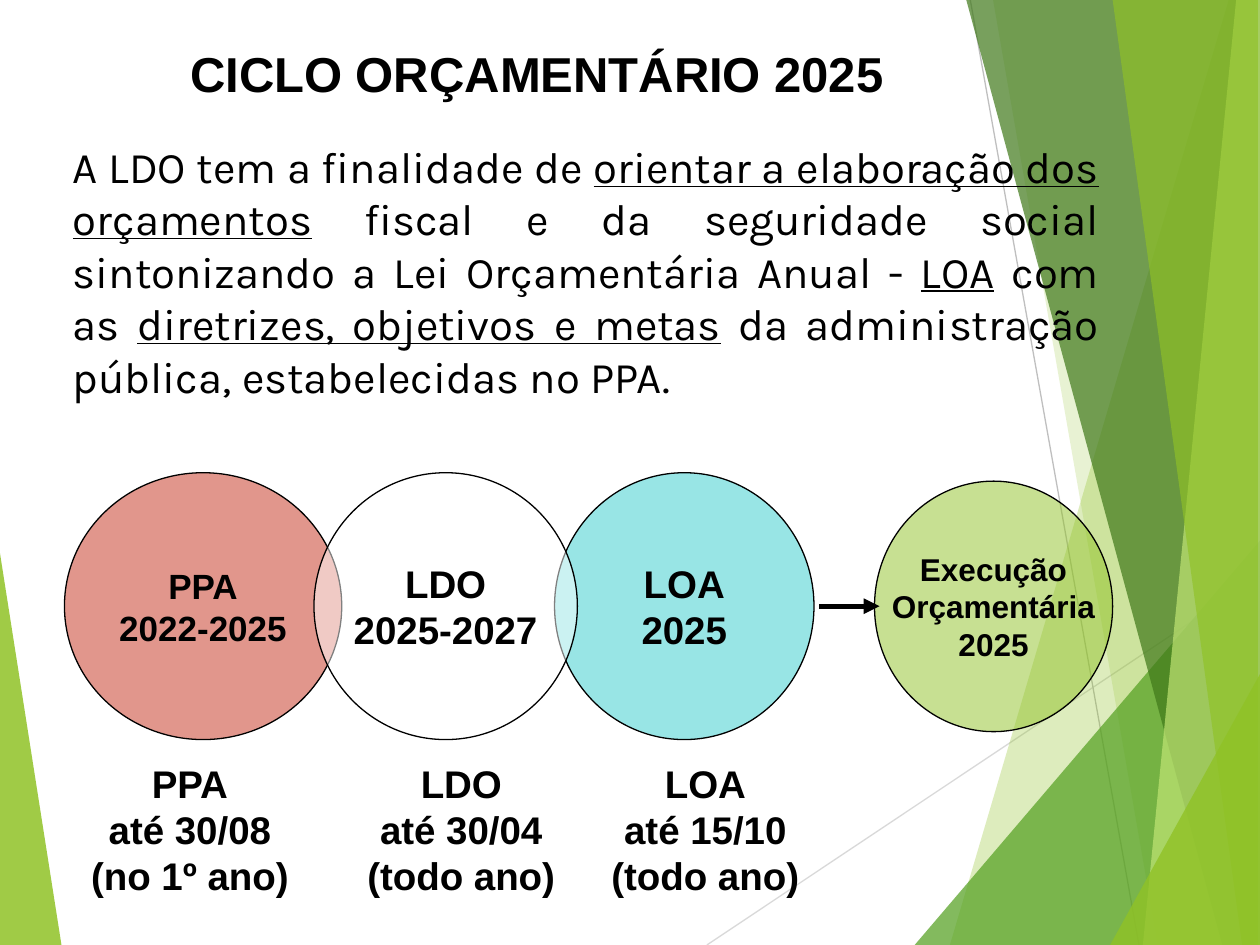
from dataclasses import dataclass

from lxml import etree
from pptx import Presentation
from pptx import util as u
from pptx.dml.color import RGBColor
from pptx.enum import shapes, text
from pptx.oxml.ns import qn

WIDE, HIGH = 25.4, 19.05


@dataclass(frozen=True)
class Theme:
    ink: str = "000000"
    lime: str = "90C226"
    leaf: str = "54A021"
    moss: str = "3F7819"
    pale: str = "C0E474"
    red: str = "C42F1A"
    aqua: str = "33CCCC"
    white: str = "FFFFFF"
    mist: str = "D9D9D9"
    grey: str = "BFBFBF"
    head: str = "Arial"
    body: str = "Karla"
    title: int = 28
    para: int = 25
    large: int = 22
    mid: int = 20
    small: int = 18


class Deck:
    def __init__(self, theme):
        self.theme = theme
        self.file = Presentation()
        self.file.slide_width, self.file.slide_height = u.Cm(WIDE), u.Cm(HIGH)
        self.slide = self.file.slides.add_slide(self.file.slide_layouts[5])

    def paint(self, shape, color, alpha):
        shape.shadow.inherit = False
        shape.fill.solid()
        shape.fill.fore_color.rgb = RGBColor.from_string(color)
        tint = shape.fill._xPr.find(qn("a:solidFill"))[0]
        etree.SubElement(tint, qn("a:alpha"), val=str(alpha * 1000))

    def facet(self, points, color, alpha):
        dots = [(u.Cm(x), u.Cm(y)) for x, y in points]
        pen = self.slide.shapes.build_freeform(*dots[0])
        pen.add_line_segments(dots[1:], close=True)
        shape = pen.convert_to_shape()
        self.paint(shape, color, alpha)
        shape.line.fill.background()

    def line(self, start, end, color, width, arrow=False):
        link = self.slide.shapes.add_connector(
            shapes.MSO_CONNECTOR.STRAIGHT, *[u.Cm(v) for v in start + end])
        link.line.color.rgb = RGBColor.from_string(color)
        link.line.width = u.Pt(width)
        if arrow:
            etree.SubElement(link.line._get_or_add_ln(), qn("a:tailEnd"), type="triangle")
        etree.SubElement(link._element.spPr, qn("a:effectLst"))

    def run(self, para, words, size, face, bold=True, under=False):
        run = para.add_run()
        run.text = words
        font = run.font
        font.size, font.name, font.bold, font.underline = u.Pt(size), face, bold, under
        font.color.rgb = RGBColor.from_string(self.theme.ink)

    def rows(self, frame, lines, size, align):
        for i, words in enumerate(lines):
            para = frame.add_paragraph() if i else frame.paragraphs[0]
            para.alignment = align
            self.run(para, words, size, self.theme.head)

    def title(self, box, words):
        shape = self.slide.shapes.title
        shape.left, shape.top, shape.width, shape.height = [u.Cm(v) for v in box]
        frame = shape.text_frame
        frame.auto_size, frame.word_wrap = text.MSO_AUTO_SIZE.NONE, False
        frame.vertical_anchor = text.MSO_ANCHOR.TOP
        self.rows(frame, [words], self.theme.title, text.PP_ALIGN.LEFT)

    def box(self, box):
        frame = self.slide.shapes.add_textbox(*[u.Cm(v) for v in box]).text_frame
        frame.word_wrap = True
        return frame

    def prose(self, box, parts, indent):
        para = self.box(box).paragraphs[0]
        para.alignment = text.PP_ALIGN.JUSTIFY
        para._p.get_or_add_pPr().set("marL", str(u.Cm(indent)))
        for words, under in parts:
            self.run(para, words, self.theme.para, self.theme.body, False, under)

    def columns(self, box, lines, stops):
        frame = self.box(box)
        self.rows(frame, ["\t" + "\t".join(line) for line in lines],
                  self.theme.large, text.PP_ALIGN.LEFT)
        for para in frame.paragraphs:
            tabs = etree.SubElement(para._p.get_or_add_pPr(), qn("a:tabLst"))
            for stop in stops:
                etree.SubElement(tabs, qn("a:tab"), pos=str(u.Cm(stop)), algn="ctr")

    def circle(self, box, color, lines, size):
        shape = self.slide.shapes.add_shape(
            shapes.MSO_SHAPE.OVAL, *[u.Cm(v) for v in box])
        self.paint(shape, color, 50)
        shape.line.color.rgb = RGBColor.from_string(self.theme.ink)
        shape.line.width = u.Pt(0.75)
        frame = shape.text_frame
        frame.word_wrap = False
        frame.vertical_anchor = text.MSO_ANCHOR.MIDDLE
        self.rows(frame, lines, size, text.PP_ALIGN.CENTER)


def main():
    t = Theme()
    deck = Deck(t)

    # Backdrop: left wedge and thin lines
    deck.facet([(0, 11.15), (1.24, HIGH), (0, HIGH)], t.lime, 85)
    deck.line((14.25, HIGH), (WIDE, 11.61), t.mist, 0.75)
    deck.line((19.56, 0), (22.96, HIGH), t.grey, 0.75)

    # Backdrop: bands (top x, foot x) and corners (foot x, peak y) on the right edge
    def band(top, foot, color, alpha, edge=WIDE):
        deck.facet([(top, 0), (foot, HIGH), (edge, HIGH), (edge, 0)], color, alpha)

    def corner(foot, peak, color, alpha):
        deck.facet([(foot, HIGH), (WIDE, peak), (WIDE, HIGH)], color, alpha)

    band(24.77, 19.15, t.lime, 30)
    band(20.02, 23.34, t.lime, 20)
    corner(18.44, 10.9, t.leaf, 72)
    band(19.48, 24.64, t.moss, 70)
    band(24.92, 23.04, t.pale, 70)
    band(22.43, 25.04, t.lime, 65, 25.36)
    corner(22.38, 13.59, t.lime, 80)

    # Title
    deck.title((3.58, 0.74, 14.66, 1.45), "CICLO ORÇAMENTÁRIO 2025")

    # Cycle: circles and arrow
    top, tall = 9.53, 5.38
    deck.circle((1.3, top, 5.59, tall), t.red, ["PPA", "2022-2025"], t.mid)
    deck.circle((11.18, top, 5.23, tall), t.aqua, ["LOA", "2025"], t.large)
    deck.circle((17.63, 9.7, 4.8, 5.05), t.lime,
                ["Execução", "Orçamentária", "2025"], t.small)
    deck.line((16.51, 12.22), (17.73, 12.22), t.ink, 3, arrow=True)
    deck.circle((6.33, top, 5.31, tall), t.white, ["LDO", "2025-2027"], t.large)

    # Deadlines under the circles
    deck.columns((0.3, 15.19, 17.4, 3.07), [
        ("PPA", "LDO", "LOA"),
        ("até 30/08", "até 30/04", "até 15/10"),
        ("(no 1º ano)", "(todo ano)", "(todo ano)"),
    ], (3.28, 8.75, 13.67))

    # Purpose of the LDO: (words, underlined)
    deck.prose((0.25, 2.69, 22.15, 6.02), [
        ("A LDO tem a finalidade de ", False),
        ("orientar a elaboração dos orçamentos", True),
        (" fiscal e da seguridade social sintonizando a Lei Orçamentária Anual - ", False),
        ("LOA", True),
        (" com as ", False),
        ("diretrizes, objetivos e metas", True),
        (" da administração pública, estabelecidas no PPA.", False),
    ], 0.97)

    deck.file.save("out.pptx")


if __name__ == "__main__":
    main()
